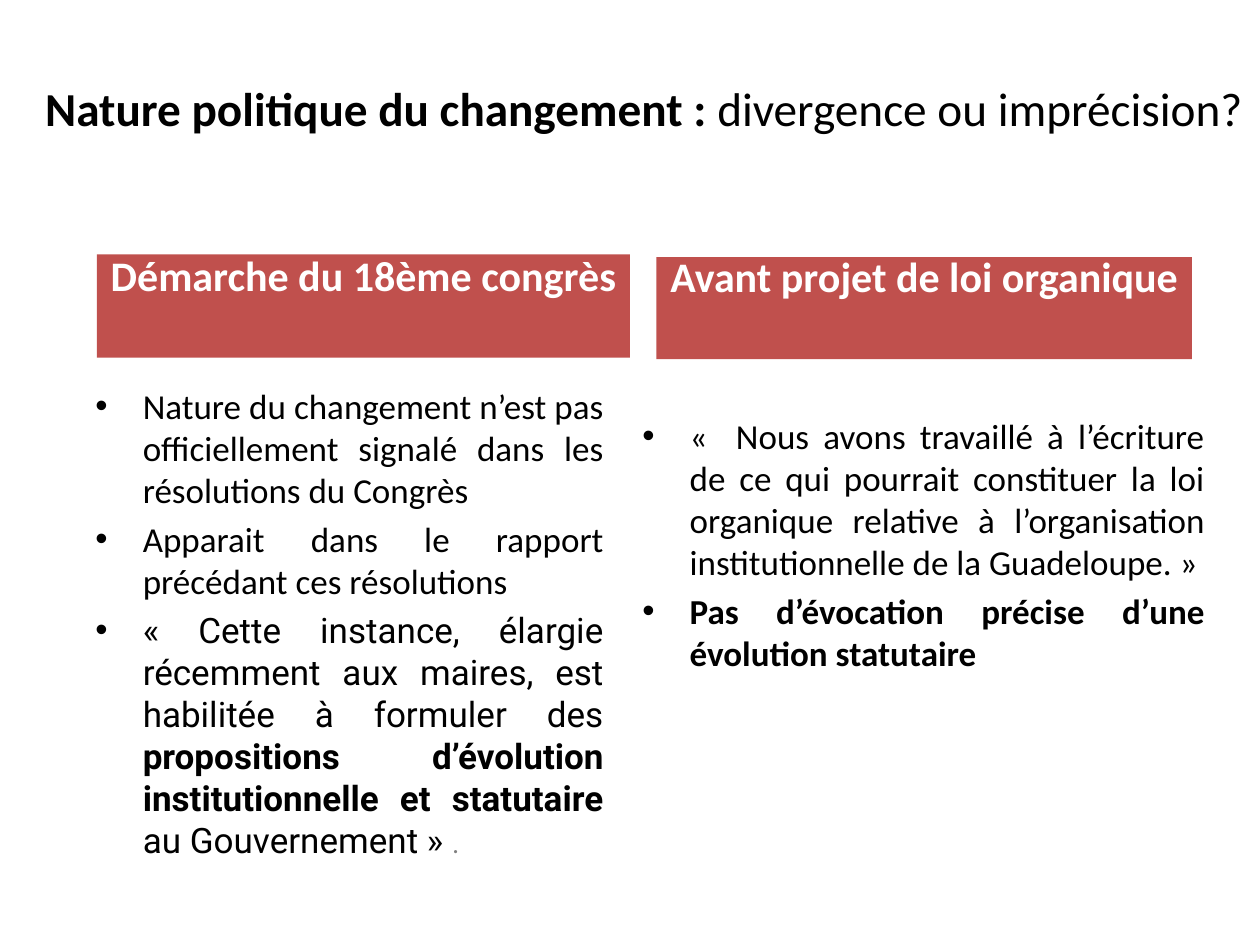
"""Build a slide comparing two views of the political nature of the change."""
from dataclasses import dataclass

from lxml.etree import SubElement
from pptx import Presentation
from pptx.dml.color import RGBColor
from pptx.enum.shapes import MSO_SHAPE as Preset
from pptx.enum.text import MSO_ANCHOR as Anchor, MSO_AUTO_SIZE as AutoSize, PP_ALIGN as Align
from pptx.oxml.ns import qn
from pptx.util import Pt

BLACK = RGBColor(0x00, 0x00, 0x00)
WHITE = RGBColor(0xFF, 0xFF, 0xFF)
GREY = RGBColor(0x80, 0x80, 0x80)
RED = RGBColor(0xC0, 0x50, 0x4D)
INDENT = Pt(27)


@dataclass(frozen=True)
class Area:
    left: float
    top: float
    width: float
    height: float

    def lengths(self) -> tuple:
        return Pt(self.left), Pt(self.top), Pt(self.width), Pt(self.height)


@dataclass(frozen=True)
class Span:
    text: str
    bold: bool = False
    font: str = "Calibri"
    size: float = 20
    color: RGBColor = BLACK


@dataclass(frozen=True)
class Column:
    heading: str
    heading_area: Area
    body_area: Area
    items: tuple


COLUMNS = (
    Column(
        "Démarche du 18ème congrès",
        Area(55.4, 145.4, 304.6, 59),
        Area(47.5, 216, 304.6, 276.5),
        (
            (Span("Nature du changement n’est pas officiellement signalé dans les résolutions du Congrès "),),
            (Span("Apparait dans le rapport précédant ces résolutions"),),
            (
                Span("« Cette instance, élargie récemment aux maires, est habilitée à formuler des ", font="Roboto"),
                Span("propositions d’évolution institutionnelle et statutaire ", bold=True, font="Roboto"),
                Span("au Gouvernement » ", font="Roboto"),
                Span(".", size=15, color=GREY),
            ),
        ),
    ),
    Column(
        "Avant projet de loi organique",
        Area(375.1, 146.9, 306, 58.3),
        Area(360, 233.3, 335.5, 236.9),
        (
            (Span("«  Nous avons travaillé à l’écriture de ce qui pourrait constituer la loi organique "
                  "relative à l’organisation institutionnelle de la Guadeloupe. »"),),
            (Span("Pas d’évocation précise d’une évolution statutaire", bold=True),),
        ),
    ),
)


def write(para, text: str, *, bold: bool, font: str, size: float, color: RGBColor) -> None:
    run = para.add_run()
    run.text = text
    run.font.name = font
    run.font.size = Pt(size)
    run.font.bold = bold
    run.font.color.rgb = color


def write_spans(para, spans: tuple) -> None:
    for span in spans:
        write(para, span.text, bold=span.bold, font=span.font, size=span.size, color=span.color)


def add_bullet(para) -> None:
    properties = para._p.get_or_add_pPr()
    properties.set("marL", str(INDENT))
    properties.set("indent", str(-INDENT))
    SubElement(properties, qn("a:buFont"), typeface="Arial")
    SubElement(properties, qn("a:buChar"), char="•")


def fill_title(page) -> None:
    title = page.shapes.title
    title.left, title.top, title.width, title.height = Area(15.8, 39.6, 704.2, 43.2).lengths()
    frame = title.text_frame
    frame.word_wrap = True
    frame.auto_size = AutoSize.NONE
    frame.vertical_anchor = Anchor.MIDDLE
    para = frame.paragraphs[0]
    para.alignment = Align.CENTER
    write_spans(para, (
        Span("Nature politique du changement : ", bold=True, size=27),
        Span("divergence ou imprécision? ", size=27),
    ))


def draw_heading(page, text: str, area: Area) -> None:
    box = page.shapes.add_shape(Preset.RECTANGLE, *area.lengths())
    box.shadow.inherit = False
    box.fill.solid()
    box.fill.fore_color.rgb = RED
    box.line.fill.background()
    frame = box.text_frame
    frame.word_wrap = True
    frame.vertical_anchor = Anchor.BOTTOM
    frame.margin_left = frame.margin_right = frame.margin_top = 0
    frame.margin_bottom = Pt(33)
    para = frame.paragraphs[0]
    para.alignment = Align.CENTER
    write(para, text, bold=True, font="Calibri", size=24, color=WHITE)


def draw_bullets(page, items: tuple, area: Area) -> None:
    frame = page.shapes.add_textbox(*area.lengths()).text_frame
    frame.word_wrap = True
    for index, spans in enumerate(items):
        para = frame.add_paragraph() if index else frame.paragraphs[0]
        para.alignment = Align.JUSTIFY
        para.space_before = Pt(4 if index else 0)
        add_bullet(para)
        write_spans(para, spans)


def main() -> None:
    deck = Presentation()
    deck.slide_width, deck.slide_height = Pt(720), Pt(540)
    page = deck.slides.add_slide(deck.slide_layouts.get_by_name("Title Only"))
    fill_title(page)
    for column in COLUMNS:
        draw_heading(page, column.heading, column.heading_area)
        draw_bullets(page, column.items, column.body_area)
    deck.save("out.pptx")


if __name__ == "__main__":
    main()
